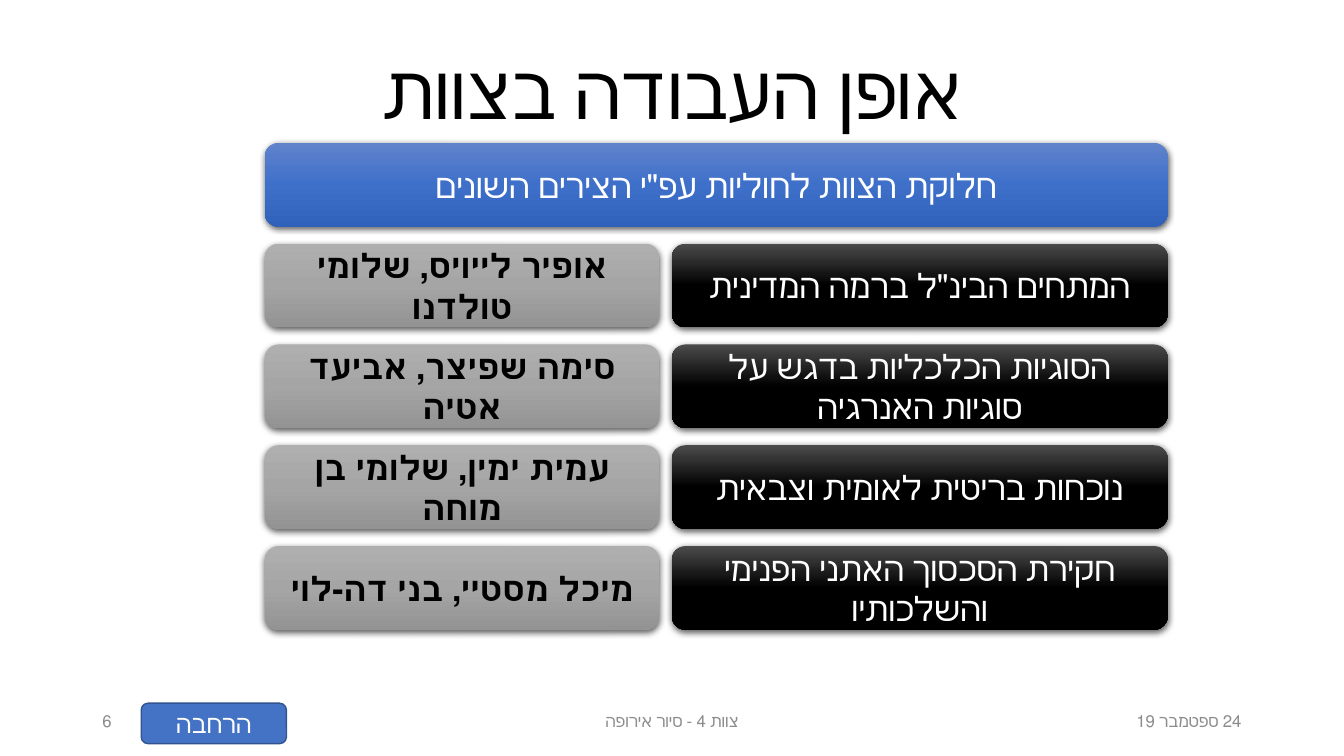
from dataclasses import dataclass
from copy import deepcopy

from lxml.etree import SubElement
from pptx import Presentation
from pptx.dml.color import RGBColor
from pptx.enum.shapes import MSO_SHAPE as Preset
from pptx.enum.text import MSO_ANCHOR as Anchor, MSO_AUTO_SIZE as AutoSize, PP_ALIGN as Align
from pptx.oxml.ns import qn
from pptx.util import Cm, Pt


@dataclass(frozen=True)
class Style:
    size: float
    font: str
    colour: str
    bold: bool = False
    align: Align = Align.CENTER
    anchor: Anchor = Anchor.MIDDLE
    spacing: float = 1.0


@dataclass(frozen=True)
class Theme:
    stops: tuple[str, str, str]
    style: Style


@dataclass(frozen=True)
class Box:
    left: float
    top: float
    width: float
    height: float

    def lengths(self) -> tuple:
        return Cm(self.left), Cm(self.top), Cm(self.width), Cm(self.height)


@dataclass(frozen=True)
class Axis:
    topic: str
    members: str


@dataclass(frozen=True)
class Footer:
    text: str
    left: float
    width: float
    align: Align


HEADING = Style(54, "Roboto", "000000", anchor=Anchor.BOTTOM, spacing=0.9)
BLUE = Theme(("6183CB", "3E70CA", "3062BB"), Style(24, "Lato", "FFFFFF"))
BLACK = Theme(("4B4B4B", "000000", "000000"), Style(24, "Lato", "FFFFFF"))
GREY = Theme(("AFAFAF", "A5A5A5", "939393"), Style(24, "Lato", "000000", bold=True))
SHADOW = {"blurRad": Pt(4.5), "dist": Pt(1.5), "dir": 5400000, "algn": "ctr", "rotWithShape": 0}

LEFT, TOP, PITCH, BAR_HEIGHT = 6.67, 3.6, 2.54, 2.11
MEMBERS_WIDTH, TOPIC_WIDTH, GUTTER = 9.95, 12.5, 0.31
FULL_WIDTH = MEMBERS_WIDTH + GUTTER + TOPIC_WIDTH

AXES = (
    Axis('המתחים הבינ"ל ברמה המדינית', "אופיר לייויס, שלומי טולדנו"),
    Axis("הסוגיות הכלכליות בדגש על סוגיות האנרגיה", "סימה שפיצר, אביעד אטיה"),
    Axis("נוכחות בריטית לאומית וצבאית", "עמית ימין, שלומי בן מוחה"),
    Axis("חקירת הסכסוך האתני הפנימי והשלכותיו", "מיכל מסטיי, בני דה-לוי"),
)
FOOTERS = (
    Footer("24 ספטמבר 19", 23.92, 7.62, Align.RIGHT),
    Footer("צוות 4 - סיור אירופה", 11.22, 11.43, Align.CENTER),
    Footer("6", 2.33, 7.62, Align.LEFT),
)


def rgb(value: str) -> RGBColor:
    return RGBColor.from_string(value)


def assign(target, values: dict) -> None:
    for name, value in values.items():
        setattr(target, name, value)


def write(shape, text: str, style: Style) -> None:
    frame = shape.text_frame
    assign(frame, {"word_wrap": True, "auto_size": AutoSize.NONE, "vertical_anchor": style.anchor})
    paragraph = frame.paragraphs[0]
    assign(paragraph, {"alignment": style.align, "line_spacing": style.spacing})
    paragraph._p.get_or_add_pPr().set("rtl", "1")
    run = paragraph.add_run()
    run.text = text
    assign(run.font, {"size": Pt(style.size), "name": style.font, "bold": style.bold})
    run.font.color.rgb = rgb(style.colour)
    run._r.get_or_add_rPr().set("lang", "he-IL")


def add_rounded(slide, box: Box, text: str, style: Style):
    shape = slide.shapes.add_shape(Preset.ROUNDED_RECTANGLE, *box.lengths())
    shape.shadow.inherit = False
    write(shape, text, style)
    return shape


def add_bar(slide, box: Box, text: str, theme: Theme) -> None:
    bar = add_rounded(slide, box, text, theme.style)
    bar.line.fill.background()
    bar.fill.gradient()
    bar.fill.gradient_angle = 270
    properties = bar._element.spPr
    stop_list = properties.find(qn("a:gradFill")).find(qn("a:gsLst"))
    stop_list.append(deepcopy(stop_list[0]))
    for stop, position, colour in zip(bar.fill.gradient_stops, (0, 0.5, 1), theme.stops):
        stop.position = position
        stop.color.rgb = rgb(colour)
    shadow = SubElement(properties.find(qn("a:effectLst")), qn("a:outerShdw"))
    for name, value in SHADOW.items():
        shadow.set(name, str(value))
    shade = SubElement(shadow, qn("a:srgbClr"))
    shade.set("val", "000000")
    SubElement(shade, qn("a:alpha")).set("val", "63000")


def add_title(slide, text: str) -> None:
    title = slide.shapes.title
    left, top, width, height = Box(2.33, 1.02, 29.21, 2.54).lengths()
    assign(title, {"left": left, "top": top, "width": width, "height": height})
    write(title, text, HEADING)


def add_footer(slide, footer: Footer) -> None:
    box = Box(footer.left, 17.65, footer.width, 1.02)
    caption = slide.shapes.add_textbox(*box.lengths())
    write(caption, footer.text, Style(12, "Calibri", "8C8C8C", align=footer.align))


def add_expand_button(slide) -> None:
    button = add_rounded(slide, Box(3.56, 17.72, 3.66, 1.02), "הרחבה", Style(18, "Calibri", "FFFFFF"))
    button.fill.solid()
    button.fill.fore_color.rgb = rgb("4472C4")
    button.line.color.rgb = rgb("325491")
    button.line.width = Pt(1)


def main() -> None:
    deck = Presentation()
    assign(deck, {"slide_width": Cm(33.87), "slide_height": Cm(19.05)})
    slide = deck.slides.add_slide(deck.slide_layouts[5])
    add_title(slide, "אופן העבודה בצוות")
    add_bar(slide, Box(LEFT, TOP, FULL_WIDTH, BAR_HEIGHT), 'חלוקת הצוות לחוליות עפ"י הצירים השונים', BLUE)
    for row, axis in enumerate(AXES, start=1):
        top = TOP + row * PITCH
        topic_left = LEFT + MEMBERS_WIDTH + GUTTER
        add_bar(slide, Box(topic_left, top, TOPIC_WIDTH, BAR_HEIGHT), axis.topic, BLACK)
        add_bar(slide, Box(LEFT, top, MEMBERS_WIDTH, BAR_HEIGHT), axis.members, GREY)
    for footer in FOOTERS:
        add_footer(slide, footer)
    add_expand_button(slide)
    deck.save("out.pptx")


if __name__ == "__main__":
    main()
